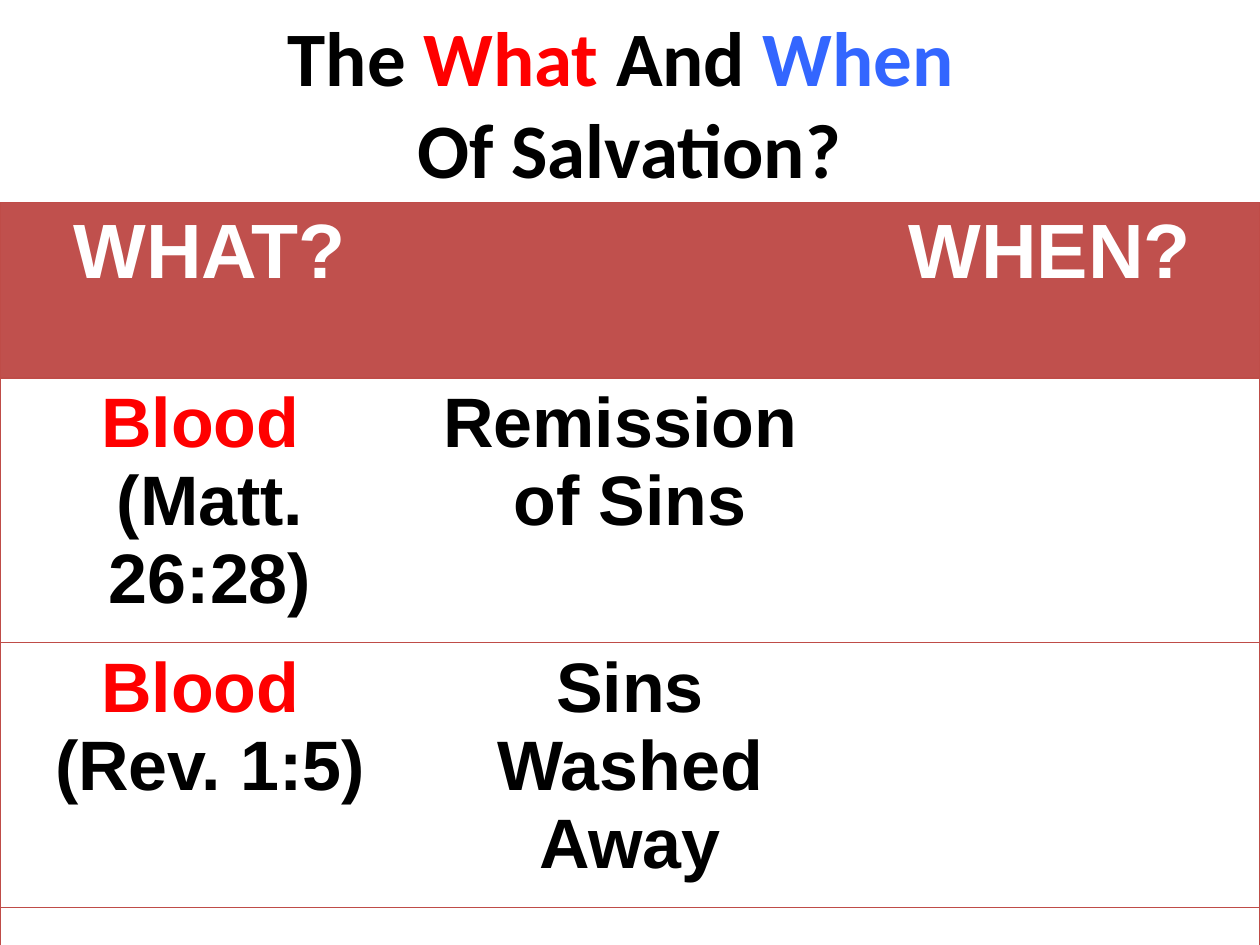
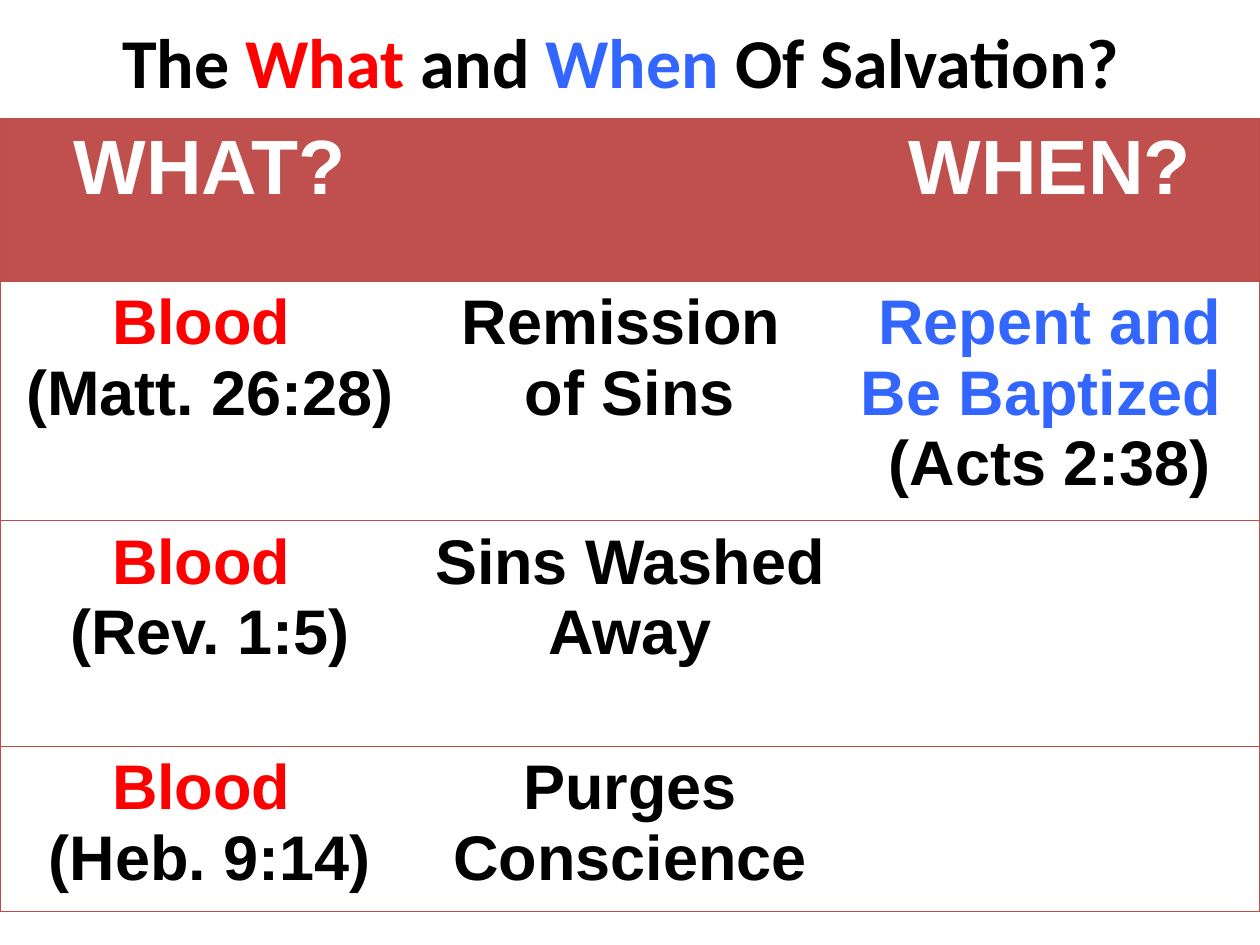
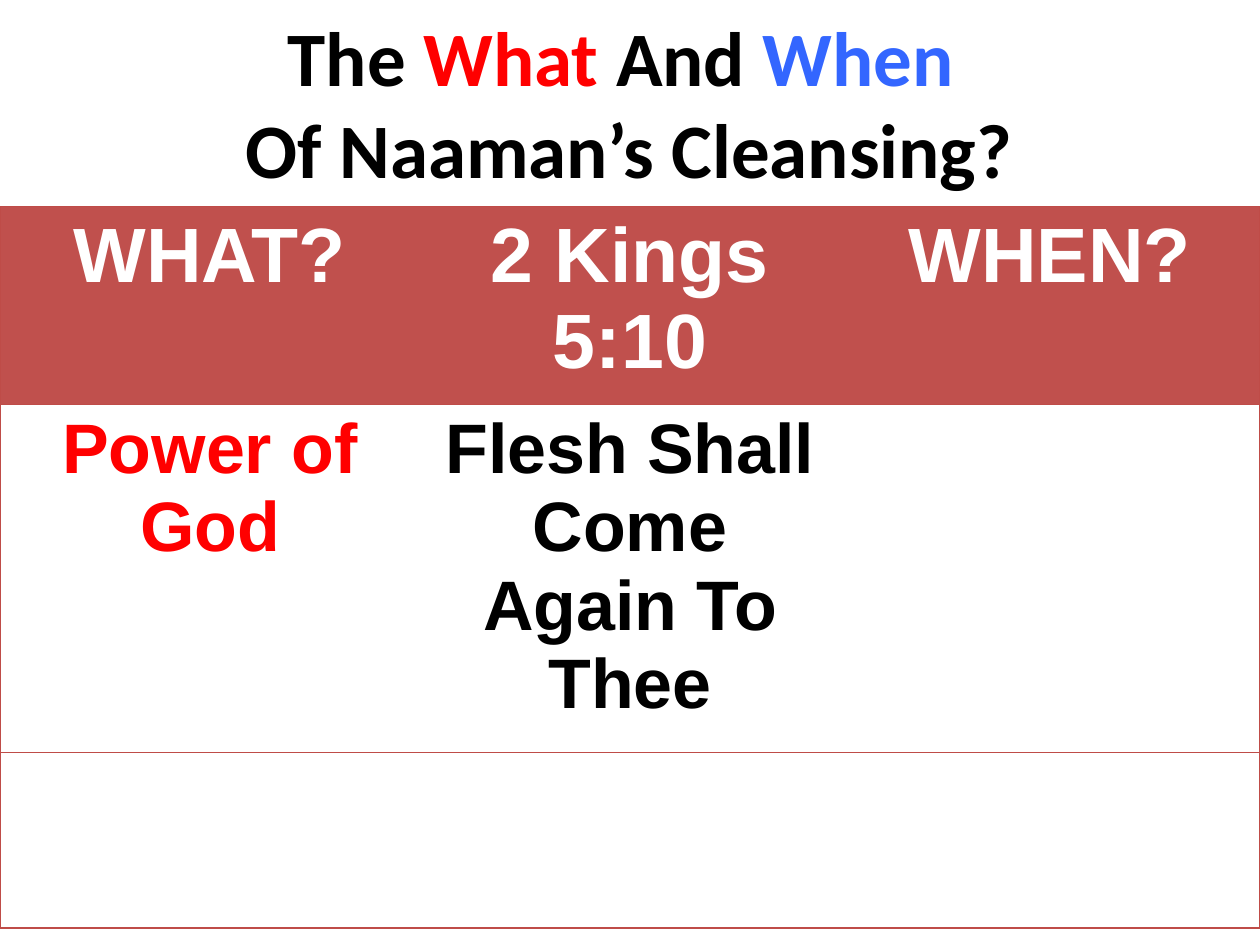
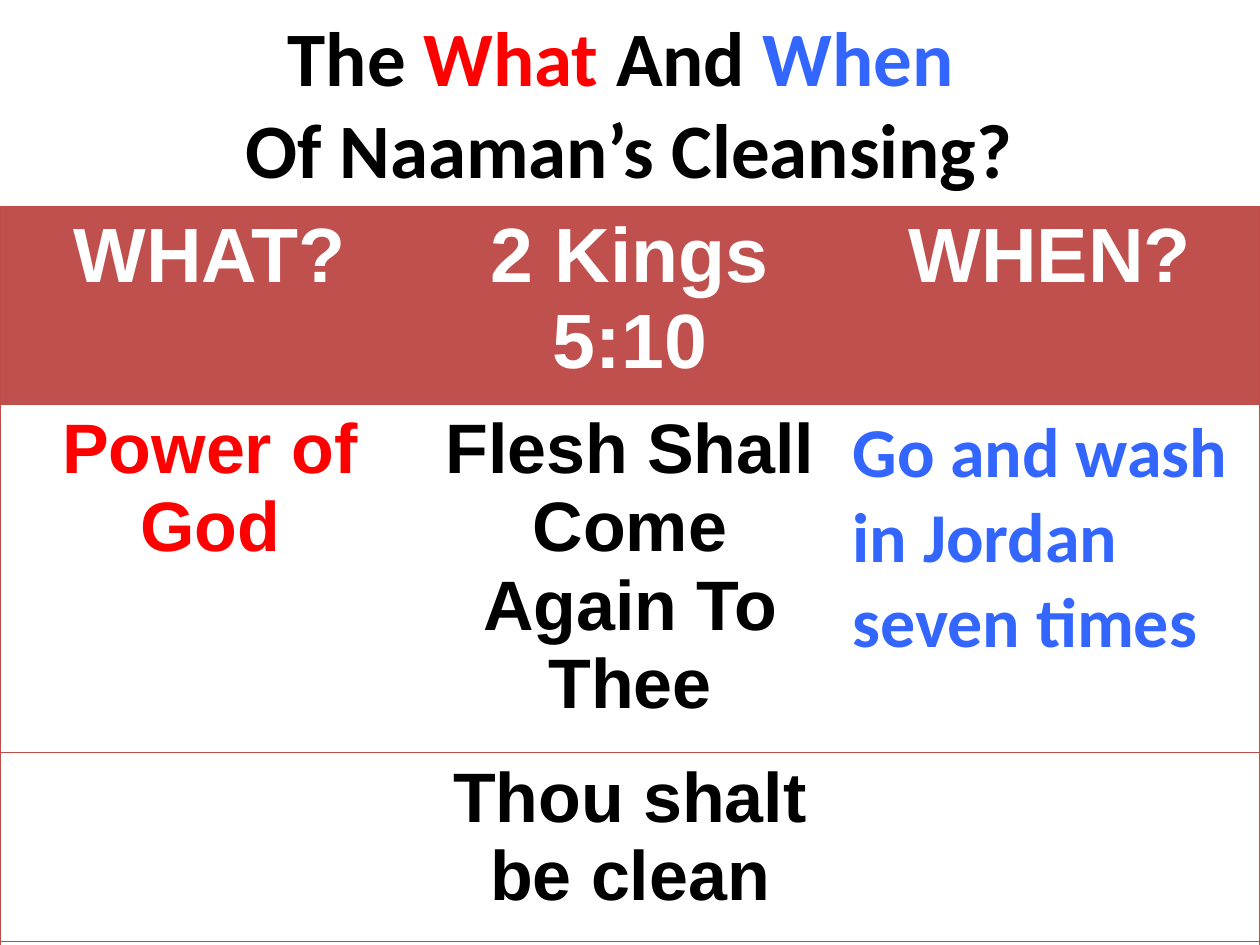
from dataclasses import dataclass

from lxml.etree import SubElement as Sub
from pptx import Presentation
from pptx.dml.color import RGBColor as Rgb
from pptx.enum.text import MSO_ANCHOR as Anchor, PP_ALIGN as Align
from pptx.oxml.ns import qn
from pptx.util import Cm, Pt


@dataclass(frozen=True)
class Theme:
    black: str = "000000"
    white: str = "FFFFFF"
    red: str = "FF0000"
    blue: str = "3366FF"
    band: str = "C0504D"
    rule: str = "BF4C48"
    head: str = "Calibri"
    body: str = "Arial"
    large: int = 44
    mid: int = 40
    small: int = 36
    line: float = 0.75


theme = Theme()


@dataclass(frozen=True)
class Para:
    text: str
    color: str = theme.black
    font: str = theme.body
    align: Align = Align.CENTER


def style(run, font, size, color):
    run.font.name = font
    run.font.size = Pt(size)
    run.font.bold = True
    run.font.color.rgb = Rgb.from_string(color)


def edge(cell, side, shown):
    """Draw one side of a cell, or clear it; call before the cell is filled."""
    line = Sub(cell._tc.get_or_add_tcPr(), qn(f"a:ln{side}"), w=str(Pt(theme.line)))
    if shown:
        Sub(Sub(line, qn("a:solidFill")), qn("a:srgbClr"), val=theme.rule)
    else:
        Sub(line, qn("a:noFill"))


def_row = [[], [], []]
blood = Para("Blood ", theme.red)
sins = [Para("Remission "), Para("of Sins")]
matt = [blood, Para("(Matt. 26:28)")]
rev = [blood, Para("(Rev. 1:5)")]
heb = [blood, Para("(Heb. 9:14)")]
washed = [Para("Sins Washed Away")]
purged = [Para("Purges Conscience")]
repent = [Para("Repent and Be Baptized ", theme.blue), Para("(Acts 2:38)")]
power = [Para("Power of God", theme.red)]
flesh = [Para("Flesh Shall Come Again To Thee")]
jordan = [Para("Go and wash in Jordan seven times", theme.blue, theme.head, Align.LEFT)]
clean = [Para("Thou shalt be clean")]

tall = (1.9, 0, 21.59, 4.09)
low = (1.9, 0.08, 21.23, 2.29)

# title box, joining word, title ending, title size, body size,
# table top, row heights, middle heading, body rows
slides = [
    (tall, "And", "Of Salvation?", theme.large, theme.mid,
     4.09, (3.53, 3.81, 3.81, 3.53), "",
     [[matt, sins, []], [rev, washed, []], def_row]),
    (low, "and", "Of Salvation?", theme.mid, theme.small,
     2.39, (3.28, 4.83, 4.55, 3.33), "",
     [[matt, sins, repent], [rev, washed, []], [heb, purged, []]]),
    (tall, "And", "Of Naaman’s Cleansing?", theme.large, theme.mid,
     4.17, (2.11, 5.33, 3.53), "2 Kings 5:10",
     [[power, flesh, []], def_row]),
    (tall, "And", "Of Naaman’s Cleansing?", theme.large, theme.mid,
     4.17, (2.11, 5.33, 3.81, 3.53), "2 Kings 5:10",
     [[power, flesh, jordan], [[], clean, []], def_row]),
]

deck = Presentation()
deck.slide_width = Cm(25.4)
deck.slide_height = Cm(19.05)

for box, link, end, size, small, top, highs, middle, body in slides:
    slide = deck.slides.add_slide(deck.slide_layouts[6])

    frame = slide.shapes.add_textbox(*map(Cm, box)).text_frame
    frame.word_wrap = True
    frame.vertical_anchor = Anchor.MIDDLE
    title = frame.paragraphs[0]
    title.alignment = Align.CENTER
    split = box == tall
    words = [("The ", theme.black), ("What", theme.red), (f" {link} ", theme.black),
             ("When ", theme.blue), (end, theme.black)]
    for text, color in words:
        if split and text == end:
            title.add_line_break()
        run = title.add_run()
        run.text = text
        style(run, theme.head, size, color)

    heads = [[Para(text, theme.white)] if text else []
             for text in ("WHAT?", middle, "WHEN?")]
    rows = [heads] + body
    table = slide.shapes.add_table(
        len(rows), 3, 0, Cm(top), deck.slide_width, Cm(sum(highs))).table
    table.horz_banding = False
    for row, high in zip(table.rows, highs):
        row.height = Cm(high)
    for r, row in enumerate(rows):
        for c, paras in enumerate(row):
            cell = table.cell(r, c)
            for side, shown in (("L", c == 0), ("R", c == 2), ("T", True), ("B", True)):
                edge(cell, side, shown)
            if r == 0:
                cell.fill.solid()
                cell.fill.fore_color.rgb = Rgb.from_string(theme.band)
            else:
                cell.fill.background()
            cell.text_frame.text = "\n".join(para.text for para in paras)
            for line, para in zip(cell.text_frame.paragraphs, paras):
                line.alignment = para.align
                style(line.runs[0], para.font, small if r else theme.large, para.color)

deck.save("out.pptx")
